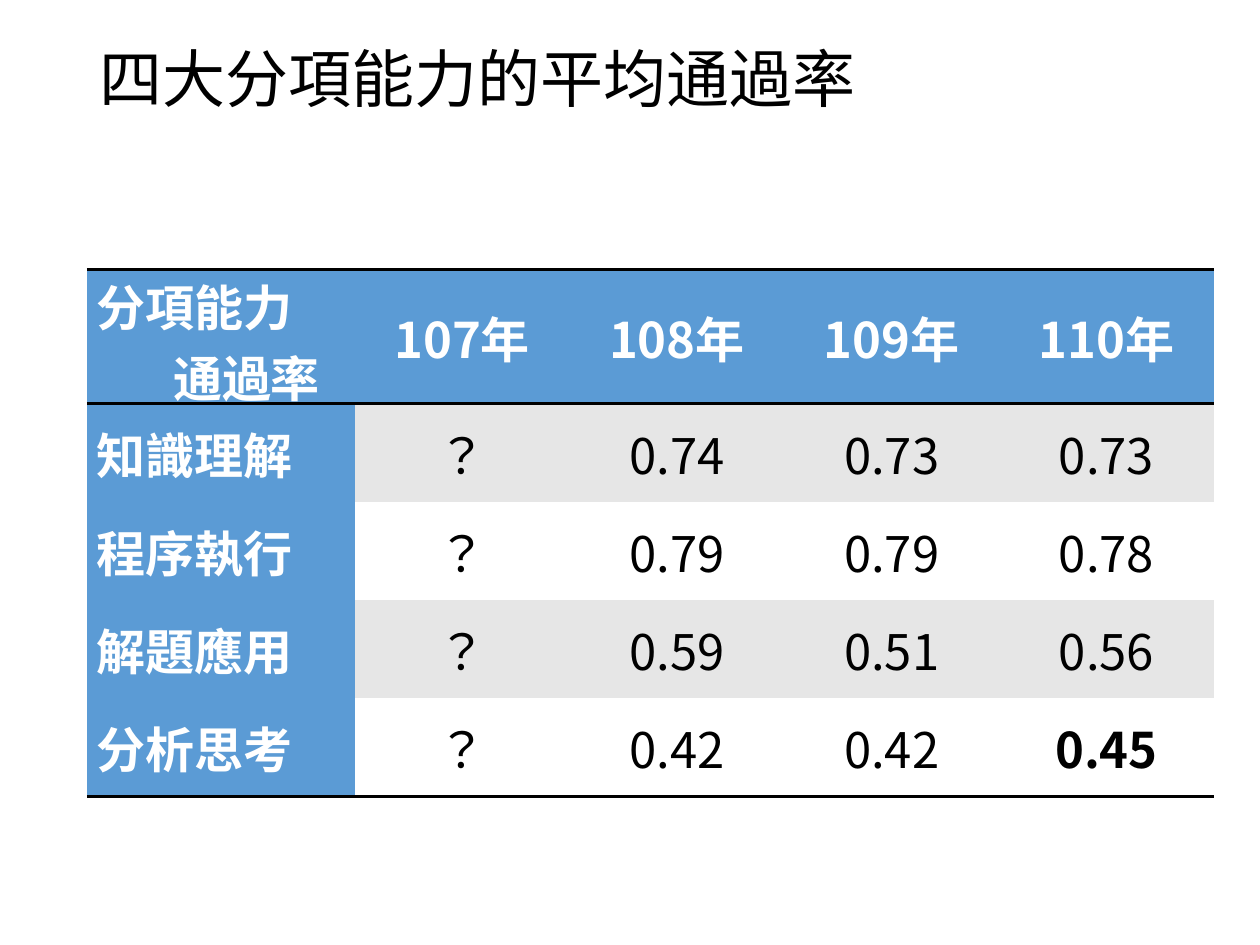
from pptx import Presentation, util as u
from pptx.dml.color import RGBColor
from pptx.enum import text
from pptx.oxml import parse_xml
from pptx.oxml.ns import nsdecls, qn
from lxml import etree

# Content
TITLE = "四大分項能力的平均通過率"
CORNER = ["分項能力", "通過率"]
YEARS = ["107年", "108年", "109年", "110年"]
RATES = {
    "知識理解": ["？", "0.74", "0.73", "0.73"],
    "程序執行": ["？", "0.79", "0.79", "0.78"],
    "解題應用": ["？", "0.59", "0.51", "0.56"],
    "分析思考": ["？", "0.42", "0.42", "0.45"],
}
BOLD = (4, 4)
HUES = {"blue": "5B9BD5", "band": "E6E6E6", "white": "FFFFFF", "ink": "000000"}
SANS = "Noto Sans CJK TC"
PLAIN = "{2D5ABB26-0587-4C30-8999-92F81FD0307C}"  # no style, no grid


def style(para, size, face, hue, bold=False):
    font = para.font
    font.size, font.name, font.bold = u.Pt(size), face, bold
    font.color.rgb = RGBColor.from_string(HUES[hue])
    latin = para._p.find(".//" + qn("a:latin"))
    east = etree.Element(qn("a:ea"), typeface=SANS)
    latin.addnext(east)


def rule(cell, side):
    line = parse_xml(
        f'<a:ln{side} {nsdecls("a")} w="{u.Pt(2)}"><a:solidFill>'
        f'<a:srgbClr val="{HUES["ink"]}"/></a:solidFill></a:ln{side}>')
    cell._tc.get_or_add_tcPr().insert(0, line)


deck = Presentation()
deck.slide_width, deck.slide_height = u.Cm(25.4), u.Cm(19.05)
slide = deck.slides.add_slide(deck.slide_layouts[6])

# Title
box = slide.shapes.add_textbox(u.Cm(1.75), u.Cm(0.76), u.Cm(16.76), u.Cm(1.8))
frame = box.text_frame
frame.word_wrap = True
frame.vertical_anchor = text.MSO_ANCHOR.MIDDLE
frame.text = TITLE
frame.paragraphs[0].line_spacing = 0.9
style(frame.paragraphs[0], 36, "Lato", "ink")

# Table frame
wide = [5.4] + [4.33] * len(YEARS)
high = [2.7] + [1.98] * len(RATES)
table = slide.shapes.add_table(
    len(high), len(wide), u.Cm(1.75), u.Cm(5.44),
    u.Cm(sum(wide)), u.Cm(sum(high))).table
table.first_row = table.horz_banding = False
table._tbl.tblPr.find(qn("a:tableStyleId")).text = PLAIN
for col, size in zip(table.columns, wide):
    col.width = u.Cm(size)
for row, size in zip(table.rows, high):
    row.height = u.Cm(size)

# Cells
grid = [["\n".join(CORNER)] + YEARS]
grid += [[name] + rates for name, rates in RATES.items()]
for r, row in enumerate(grid):
    for c, words in enumerate(row):
        cell = table.cell(r, c)
        head = r == 0 or c == 0
        cell.text = words
        cell.vertical_anchor = text.MSO_ANCHOR.MIDDLE
        cell.margin_left = cell.margin_right = u.Cm(0.19)
        cell.margin_top = cell.margin_bottom = 0
        cell.fill.solid()
        fill = "blue" if head else "band" if r % 2 else "white"
        cell.fill.fore_color.rgb = RGBColor.from_string(HUES[fill])
        for para in cell.text_frame.paragraphs:
            para.alignment = text.PP_ALIGN.CENTER if c else text.PP_ALIGN.LEFT
            style(para, 28, SANS, "white" if head else "ink",
                  head or (r, c) == BOLD)
        if r in (0, len(grid) - 1):
            rule(cell, "B")
        if r == 0:
            rule(cell, "T")

# Indented second line of the corner cell
props = table.cell(0, 0).text_frame.paragraphs[1]._p.get_or_add_pPr()
props.set("marL", str(u.Cm(1.55)))

deck.save("out.pptx")
